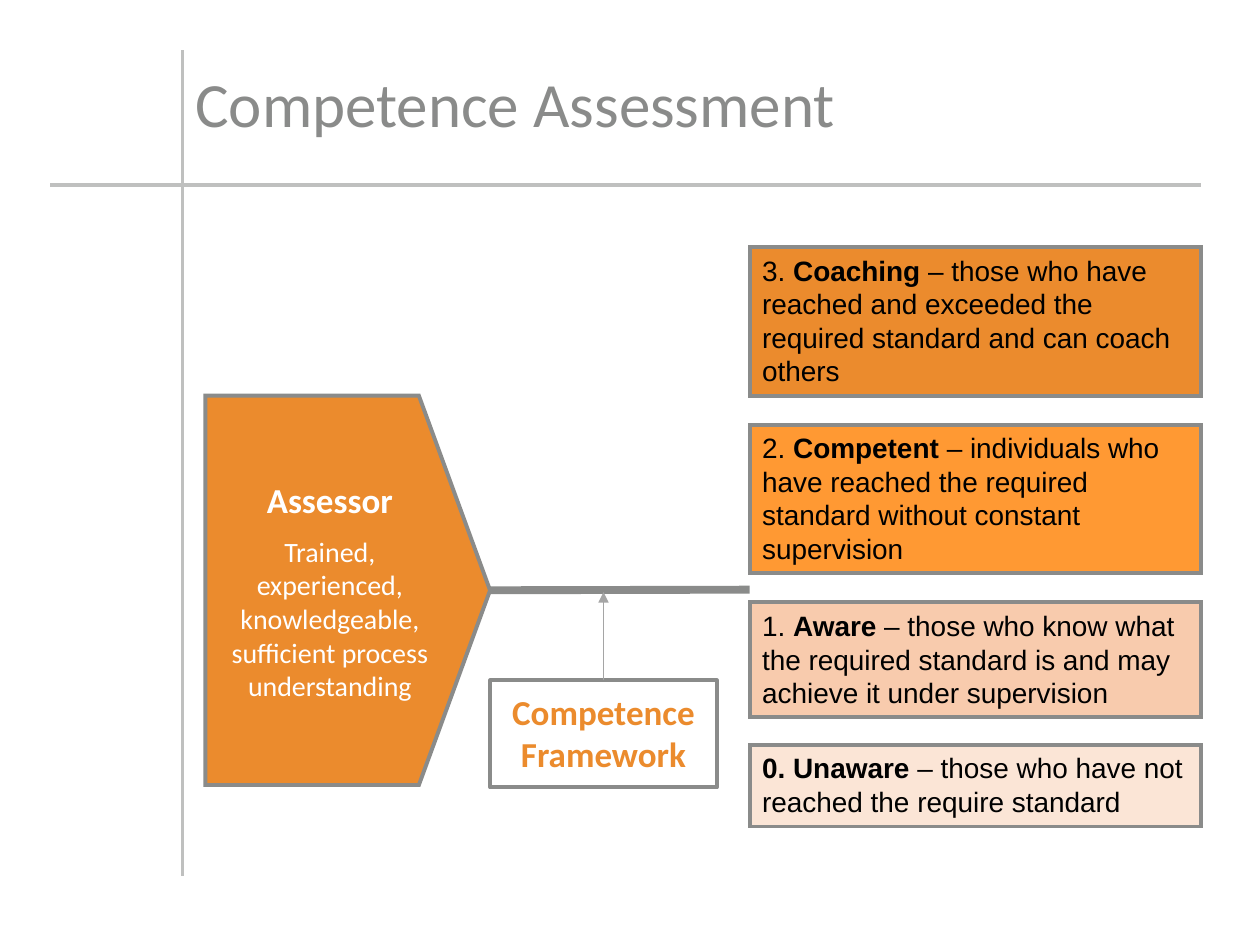
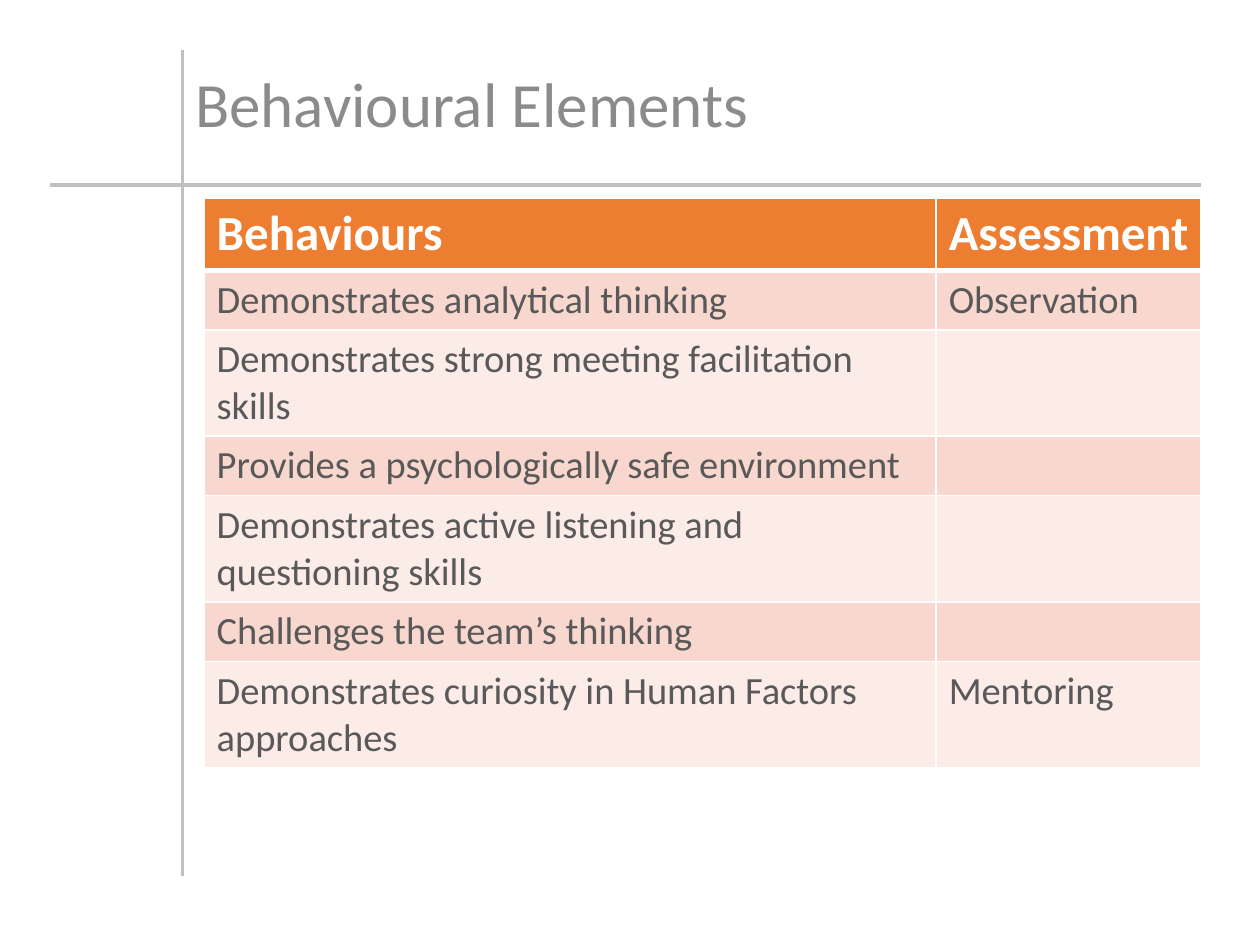
from lxml.etree import SubElement
from pptx import Presentation
from pptx.dml.color import RGBColor
from pptx.enum.shapes import MSO_CONNECTOR, MSO_SHAPE
from pptx.enum.text import MSO_ANCHOR, MSO_AUTO_SIZE, PP_ALIGN
from pptx.oxml.ns import qn
from pptx.util import Inches, Pt

GREY = RGBColor(0x8A, 0x8B, 0x8A)
RULE = RGBColor(0xBF, 0xC0, 0xBF)
ARROW = RGBColor(0xA5, 0xA5, 0xA5)
ORANGE = RGBColor(0xEB, 0x8B, 0x2D)
AMBER = RGBColor(0xFF, 0x99, 0x33)
PEACH = RGBColor(0xF8, 0xCB, 0xAD)
CREAM = RGBColor(0xFB, 0xE5, 0xD6)
HEAD = RGBColor(0xED, 0x7D, 0x31)
BANDS = RGBColor(0xFC, 0xEC, 0xE8), RGBColor(0xF8, 0xD7, 0xCE)
INK = RGBColor(0x59, 0x59, 0x59)
WHITE = RGBColor(0xFF, 0xFF, 0xFF)
BLACK = RGBColor(0, 0, 0)


def write(frame, text, size, color, font="Calibri", bold=False,
          align=PP_ALIGN.LEFT, anchor=MSO_ANCHOR.TOP, more=False, before=0):
    """Write a paragraph, where ** switches bold; more adds it below the last."""
    frame.word_wrap = True
    frame.vertical_anchor = anchor
    para = frame.add_paragraph() if more else frame.paragraphs[0]
    para.alignment = align
    if more:
        para.space_before = Pt(before)
    for i, part in enumerate(text.split("**")):
        if part:
            run = para.add_run()
            run.text = part
            run.font.name, run.font.size = font, Pt(size)
            run.font.bold = bold or i % 2 == 1
            run.font.color.rgb = color
    return para


def draw(slide, x1, y1, x2, y2, color, width):
    """Draw a straight line without a shadow."""
    line = slide.shapes.add_connector(
        MSO_CONNECTOR.STRAIGHT, Inches(x1), Inches(y1), Inches(x2), Inches(y2))
    line.line.color.rgb, line.line.width = color, Pt(width)
    SubElement(line._element.spPr, qn("a:effectLst"))
    return line


deck = Presentation()
deck.slide_width, deck.slide_height = Inches(10), Inches(7.5)

# Shared title and rules
slides = []
for name in ("Competence Assessment", "Behavioural Elements"):
    slide = deck.slides.add_slide(deck.slide_layouts[5])
    draw(slide, 1.45, 0.4, 1.45, 6.95, RULE, 2)
    draw(slide, 9.53, 1.47, 0.4, 1.47, RULE, 2)
    title = slide.shapes.title
    title.left, title.top = Inches(1.45), Inches(0.4)
    title.width, title.height = Inches(8.08), Inches(0.9)
    title.text_frame.auto_size = MSO_AUTO_SIZE.NONE
    write(title.text_frame, name, 36, GREY,
          anchor=MSO_ANCHOR.MIDDLE).line_spacing = 0.9
    slides.append(slide)
chart, grid = slides

# Assessor, framework and the four levels
boxes = []
for kind, x, y, w, h, fill in (
        (MSO_SHAPE.RECTANGLE, 5.95, 5.91, 3.58, 0.65, CREAM),
        (MSO_SHAPE.RECTANGLE, 5.95, 4.78, 3.58, 0.91, PEACH),
        (MSO_SHAPE.RECTANGLE, 5.95, 3.37, 3.58, 1.18, AMBER),
        (MSO_SHAPE.RECTANGLE, 5.95, 1.96, 3.58, 1.18, ORANGE),
        (MSO_SHAPE.PENTAGON, 1.63, 3.14, 2.26, 3.09, ORANGE),
        (MSO_SHAPE.RECTANGLE, 3.89, 5.4, 1.8, 0.85, None)):
    box = chart.shapes.add_shape(kind, Inches(x), Inches(y), Inches(w), Inches(h))
    box.shadow.inherit = False
    box.line.color.rgb, box.line.width = GREY, Pt(2.25)
    if fill:
        box.fill.solid()
        box.fill.fore_color.rgb = fill
        SubElement(box.line._get_or_add_ln(), qn("a:miter"), lim="800000")
    else:
        box.fill.background()
    boxes.append(box)
*levels, plate, frame = boxes

for box, text in zip(levels, (
        "**0. Unaware** – those who have not reached the require standard",
        "1. **Aware** – those who know what the required standard is and may "
        "achieve it under supervision",
        "2. **Competent **– individuals who have reached the required standard "
        "without constant supervision",
        "3. **Coaching** – those who have reached and exceeded the required "
        "standard and can coach others")):
    write(box.text_frame, text, 16, BLACK, font="Arial")

plate.adjustments[0] = 0.25
mid = {"align": PP_ALIGN.CENTER, "anchor": MSO_ANCHOR.MIDDLE}
write(plate.text_frame, "Assessor", 20, WHITE, bold=True, **mid)
write(plate.text_frame, "Trained, experienced, knowledgeable, sufficient process "
      "understanding", 16, WHITE, more=True, before=8, **mid)

text = frame.text_frame
text.margin_left = text.margin_right = Inches(0.08)
text.margin_top = text.margin_bottom = Inches(0.08)
write(text, "Competence Framework", 20, ORANGE, bold=True, align=PP_ALIGN.CENTER)

draw(chart, 3.89, 4.69, 5.95, 4.68, GREY, 4.5).begin_connect(plate, 3)
arrow = draw(chart, 4.79, 5.4, 4.79, 4.7, ARROW, 0.5)
arrow.begin_connect(frame, 0)
SubElement(arrow.line._get_or_add_ln(), qn("a:tailEnd"), type="triangle")

# Behaviours table
rows = (
    ("Behaviours", "Assessment", 0.56),
    ("Demonstrates analytical thinking", "Observation", 0.47),
    ("Demonstrates strong meeting facilitation skills", "", 0.84),
    ("Provides a psychologically safe environment", "", 0.47),
    ("Demonstrates active listening and questioning skills", "", 0.84),
    ("Challenges the team’s thinking", "", 0.47),
    ("Demonstrates curiosity in Human Factors approaches", "Mentoring", 0.84),
)
table = grid.shapes.add_table(len(rows), 2, Inches(1.62), Inches(1.57),
                              Inches(7.91), Inches(4.49)).table
for col, width in zip(table.columns, (5.81, 2.1)):
    col.width = Inches(width)
for r, (*texts, height) in enumerate(rows):
    table.rows[r].height = Inches(height)
    for c, text in enumerate(texts):
        cell = table.cell(r, c)
        cell.margin_right = Inches(0.05)
        props = cell._tc.get_or_add_tcPr()
        for side in "LRTB":
            thick = (r, side) in ((0, "B"), (1, "T"))
            edge = SubElement(props, qn("a:ln" + side), w=str(Pt(3 if thick else 1)))
            paint = SubElement(edge, qn("a:solidFill"))
            SubElement(paint, qn("a:srgbClr"), val=str(WHITE))
        cell.fill.solid()
        cell.fill.fore_color.rgb = BANDS[r % 2] if r else HEAD
        if text:
            write(cell.text_frame, text, 22 if r else 28, INK if r else WHITE,
                  bold=r == 0)

deck.save("out.pptx")
